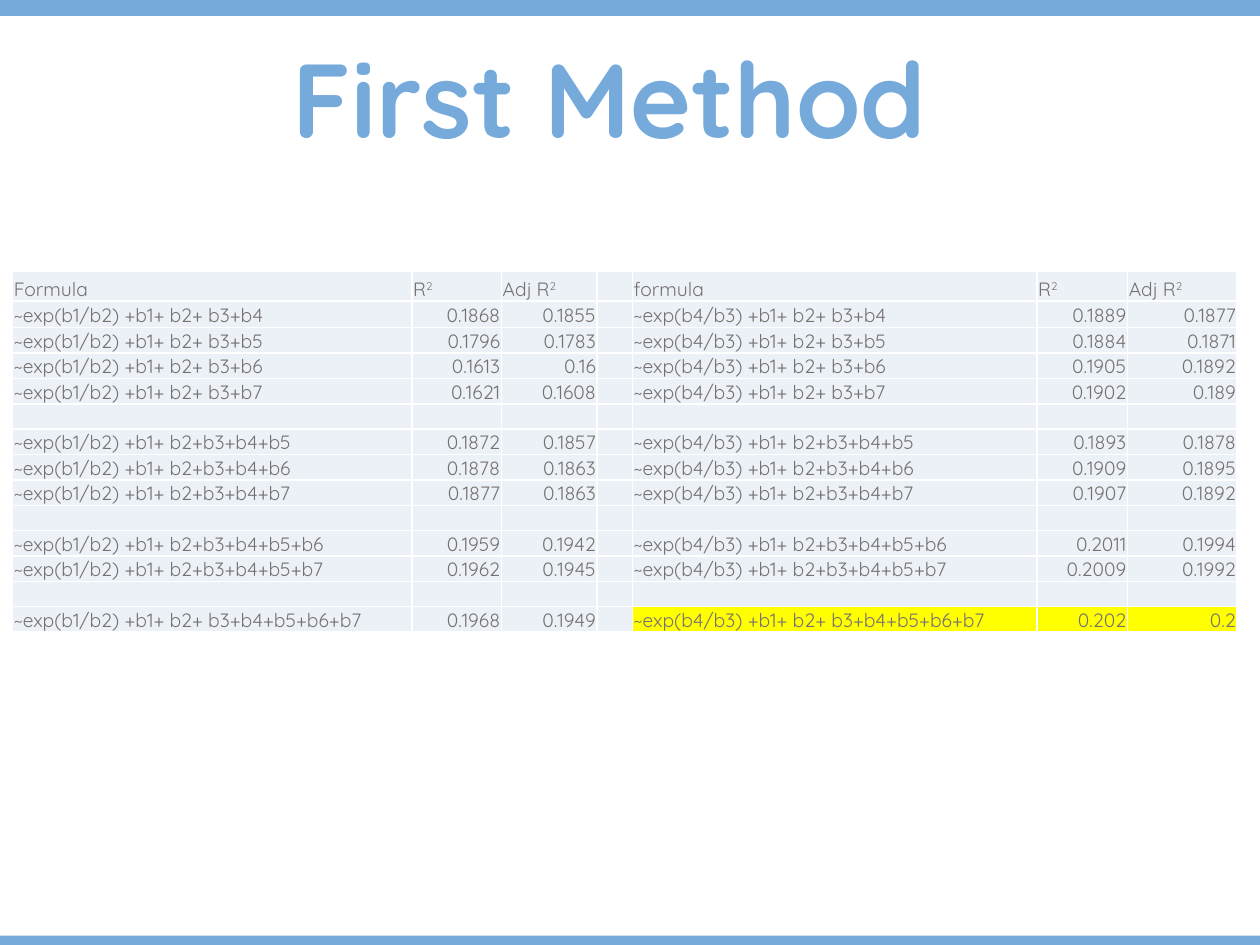
from lxml.etree import SubElement
from pptx import Presentation
from pptx.dml.color import RGBColor
from pptx.enum.shapes import MSO_SHAPE as Shape
from pptx.enum.text import MSO_ANCHOR as Anchor, MSO_AUTO_SIZE as AutoSize, PP_ALIGN as Align
from pptx.oxml.ns import qn
from pptx.util import Inches, Pt

WIDTH, HEIGHT = 10, 7.5
BLUE, GRAY, PALE, YELLOW, WHITE = "75AADB", "767171", "ECF1F8", "FFFF00", "FFFFFF"
FONT = "Quicksand"
COLUMNS = [3.17, 0.71, 0.76, 0.28, 3.21, 0.72, 0.87]
ROWS = [0.24, 0.21] + [0.2] * 12
RIGHT_START = 4
CELL_FORMAT = {
    "vertical_anchor": Anchor.BOTTOM,
    "margin_left": Inches(0.01),
    "margin_top": Inches(0.01),
    "margin_right": Inches(0.01),
    "margin_bottom": 0,
}
RESULTS = [
    ("b2+ b3+b4", "0.1868", "0.1855", "0.1889", "0.1877"),
    ("b2+ b3+b5", "0.1796", "0.1783", "0.1884", "0.1871"),
    ("b2+ b3+b6", "0.1613", "0.16", "0.1905", "0.1892"),
    ("b2+ b3+b7", "0.1621", "0.1608", "0.1902", "0.189"),
    None,
    ("b2+b3+b4+b5", "0.1872", "0.1857", "0.1893", "0.1878"),
    ("b2+b3+b4+b6", "0.1878", "0.1863", "0.1909", "0.1895"),
    ("b2+b3+b4+b7", "0.1877", "0.1863", "0.1907", "0.1892"),
    None,
    ("b2+b3+b4+b5+b6", "0.1959", "0.1942", "0.2011", "0.1994"),
    ("b2+b3+b4+b5+b7", "0.1962", "0.1945", "0.2009", "0.1992"),
    None,
    ("b2+ b3+b4+b5+b6+b7", "0.1968", "0.1949", "0.202", "0.2"),
]


def color(code):
    return RGBColor.from_string(code)


def apply_format(target, values):
    for name, value in values.items():
        setattr(target, name, value)


def add_span(para, text, size, code, bold=False):
    span = para.add_run()
    span.text = text
    apply_format(span.font, {"name": FONT, "size": Pt(size), "bold": bold})
    span.font.color.rgb = color(code)
    return span


def add_bar(page, top, height):
    bar = page.shapes.add_shape(
        Shape.RECTANGLE, 0, Inches(HEIGHT * top), Inches(WIDTH), Inches(HEIGHT * height)
    )
    bar.shadow.inherit = False
    bar.fill.solid()
    bar.fill.fore_color.rgb = color(BLUE)
    bar.line.fill.background()


def format_title(page, text):
    title = page.shapes.title
    apply_format(title, {
        "left": Inches(2.22), "top": Inches(0.33),
        "width": Inches(6.23), "height": Inches(1.58),
    })
    apply_format(title.text_frame, {
        "word_wrap": True, "auto_size": AutoSize.NONE, "vertical_anchor": Anchor.TOP,
    })
    para = title.text_frame.paragraphs[0]
    apply_format(para, {
        "alignment": Align.LEFT, "line_spacing": 0.9, "space_before": Pt(10),
    })
    add_span(para, text, 60, BLUE, bold=True)


def add_borders(cell):
    properties = cell._tc.get_or_add_tcPr()
    for position, side in enumerate(("lnL", "lnR", "lnT", "lnB")):
        line = SubElement(properties, qn(f"a:{side}"), w=str(Pt(1)))
        fill = SubElement(line, qn("a:solidFill"))
        SubElement(fill, qn("a:srgbClr"), val=WHITE)
        properties.insert(position, line)


def fill_cell(cell, text, fill, align):
    apply_format(cell, CELL_FORMAT)
    cell.fill.solid()
    cell.fill.fore_color.rgb = color(fill)
    add_borders(cell)
    para = cell.text_frame.paragraphs[0]
    para.alignment = align
    if not text:
        SubElement(para._p, qn("a:endParaRPr"), sz="1100")
        return
    base, mark, power = text.partition("^")
    add_span(para, base, 11, GRAY)
    if mark:
        add_span(para, power, 11, GRAY).font._element.set("baseline", "30000")


def table_rows():
    yield ["Formula", "R^2", "Adj R^2", "", "formula", "R^2", "Adj R^2"]
    for result in RESULTS:
        if result is None:
            yield [""] * len(COLUMNS)
            continue
        terms, *scores = result
        yield [f"~exp(b1/b2) +b1+ {terms}", *scores[:2], "",
               f"~exp(b4/b3) +b1+ {terms}", *scores[2:]]


def add_results(page):
    table = page.shapes.add_table(
        len(ROWS), len(COLUMNS), Inches(0.1), Inches(2.15),
        Inches(sum(COLUMNS)), Inches(sum(ROWS)),
    ).table
    apply_format(table, {"first_row": False, "horz_banding": False})
    for column, width in zip(table.columns, COLUMNS):
        column.width = Inches(width)
    for row, height in zip(table.rows, ROWS):
        row.height = Inches(height)
    for r, texts in enumerate(table_rows()):
        for c, text in enumerate(texts):
            best = r == len(ROWS) - 1 and c >= RIGHT_START
            is_score = r > 0 and c % RIGHT_START in (1, 2)
            fill_cell(table.cell(r, c), text, YELLOW if best else PALE,
                      Align.RIGHT if is_score else Align.LEFT)


def main():
    deck = Presentation()
    apply_format(deck, {"slide_width": Inches(WIDTH), "slide_height": Inches(HEIGHT)})
    page = deck.slides.add_slide(deck.slide_layouts.get_by_name("Title Only"))
    add_bar(page, 0, 0.017)
    add_bar(page, 0.99, 0.01)
    format_title(page, "First Method")
    add_results(page)
    deck.save("out.pptx")


if __name__ == "__main__":
    main()
